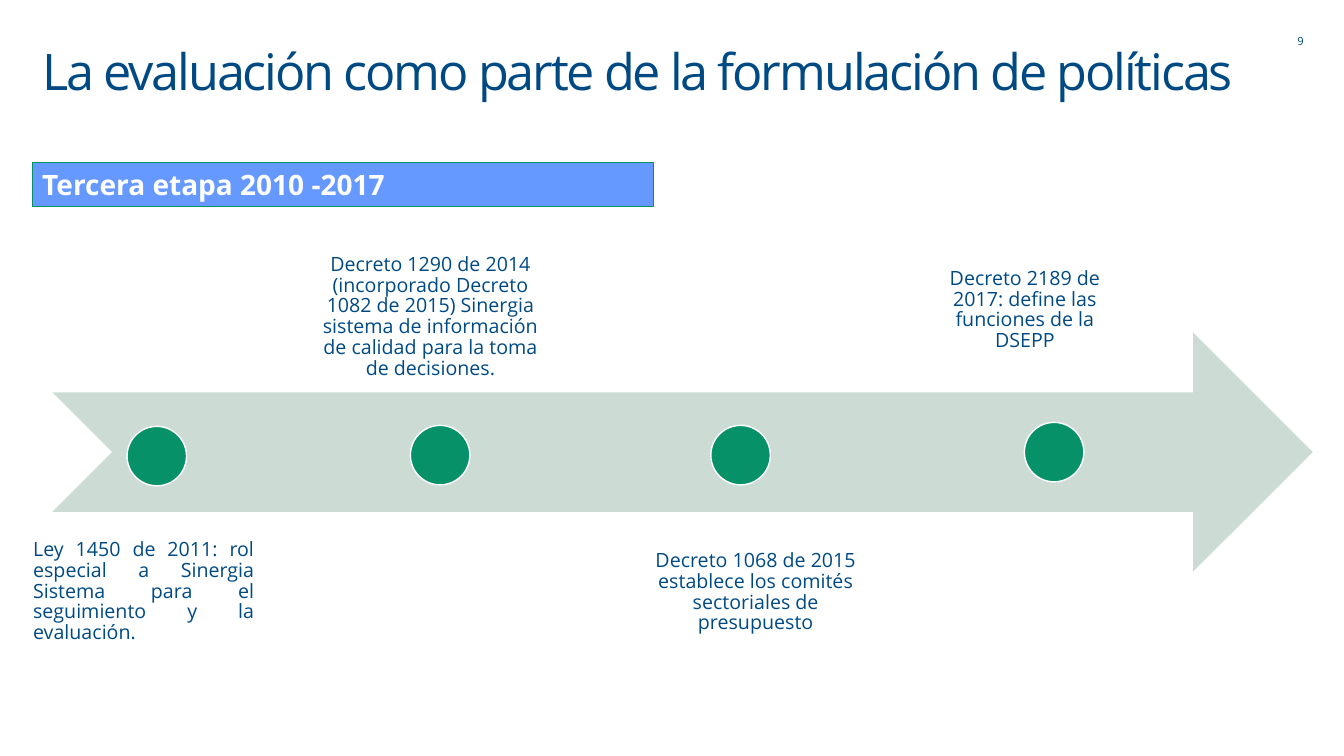
from pptx import Presentation
from pptx.dml.color import RGBColor
from pptx.enum.shapes import MSO_SHAPE
from pptx.enum.text import MSO_ANCHOR, PP_ALIGN
from pptx.util import Emu, Pt

PX = 9144  # 100 px to the inch
FONT = "Open Sans"
NAVY = RGBColor(0x00, 0x4A, 0x84)
GREEN = RGBColor(0x06, 0x91, 0x69)
SAGE = RGBColor(0xCC, 0xDC, 0xD4)
BLUE = RGBColor(0x66, 0x99, 0xFF)
WHITE = RGBColor(0xFF, 0xFF, 0xFF)
RECT, OVAL, ARROW = MSO_SHAPE.RECTANGLE, MSO_SHAPE.OVAL, MSO_SHAPE.NOTCHED_RIGHT_ARROW
LEFT, CENTER, JUSTIFY = PP_ALIGN.LEFT, PP_ALIGN.CENTER, PP_ALIGN.JUSTIFY
TOP, MIDDLE = MSO_ANCHOR.TOP, MSO_ANCHOR.MIDDLE

DOT = 59
# dot left and top relative to the arrow, text box, alignment, anchor, text
MILESTONES = [
    (74, 93, (23, 531, 239, 128), JUSTIFY, TOP,
     "Ley 1450 de 2011: rol especial a Sinergia Sistema para el seguimiento y la evaluación."),
    (355, 92, (303, 239, 248, 151), CENTER, MIDDLE,
     "Decreto 1290 de 2014 (incorporado Decreto 1082 de 2015) Sinergia sistema de "
     "información de calidad para la toma de decisiones."),
    (653, 92, (640, 536, 219, 104), CENTER, MIDDLE,
     "Decreto 1068 de 2015 establece los comités sectoriales de presupuesto"),
    (964, 89, (907, 256, 219, 104), CENTER, MIDDLE,
     "Decreto 2189 de 2017: define las funciones de la DSEPP"),
]


def px(*lengths):
    return [Emu(n * PX) for n in lengths]


def write(sp, text, size, color=NAVY, align=CENTER, anchor=MIDDLE, bold=False, spacing=None):
    tf = sp.text_frame
    tf.word_wrap = True
    tf.vertical_anchor = anchor
    p = tf.paragraphs[0]
    p.text = text
    p.alignment = align
    p.line_spacing = spacing
    p.font.name = FONT
    p.font.size = Pt(size)
    p.font.bold = bold
    p.font.color.rgb = color
    return p


def add_shape(slide, kind, box, fill, line=None, width=1):
    sp = slide.shapes.add_shape(kind, *px(*box))
    sp.shadow.inherit = False
    sp.fill.solid()
    sp.fill.fore_color.rgb = fill
    if line is None:
        sp.line.fill.background()
    else:
        sp.line.color.rgb = line
        sp.line.width = Pt(width)
    return sp


def add_title(slide, box, text):
    sp = slide.shapes.title
    sp.left, sp.top, sp.width, sp.height = px(*box)
    p = write(sp, text, 36, align=JUSTIFY, spacing=0.9)
    p.runs[0].font._element.set("spc", "-150")


def add_text(slide, box, text, size, **style):
    write(slide.shapes.add_textbox(*px(*box)), text, size, **style)


def add_banner(slide, box, text):
    sp = add_shape(slide, RECT, box, BLUE, GREEN, 0.75)
    write(sp, text, 20, WHITE, LEFT, bold=True)


def add_timeline(slide, box):
    left, top = box[:2]
    add_shape(slide, ARROW, box, SAGE)
    for dx, dy, text_box, align, anchor, text in MILESTONES:
        add_shape(slide, OVAL, (left + dx, top + dy, DOT, DOT), GREEN, WHITE)
        add_text(slide, text_box, text, 14, align=align, anchor=anchor, spacing=0.88)


def main():
    prs = Presentation()
    prs.slide_width, prs.slide_height = px(1333, 750)
    slide = prs.slides.add_slide(prs.slide_layouts[5])
    add_title(slide, (32, 43, 1270, 61), "La evaluación como parte de la formulación de políticas")
    add_text(slide, (1270, 29, 40, 24), "9", 8)
    add_banner(slide, (32, 161, 616, 44), "Tercera etapa 2010 -2017")
    add_timeline(slide, (52, 330, 1250, 237))
    prs.save("out.pptx")


if __name__ == "__main__":
    main()
